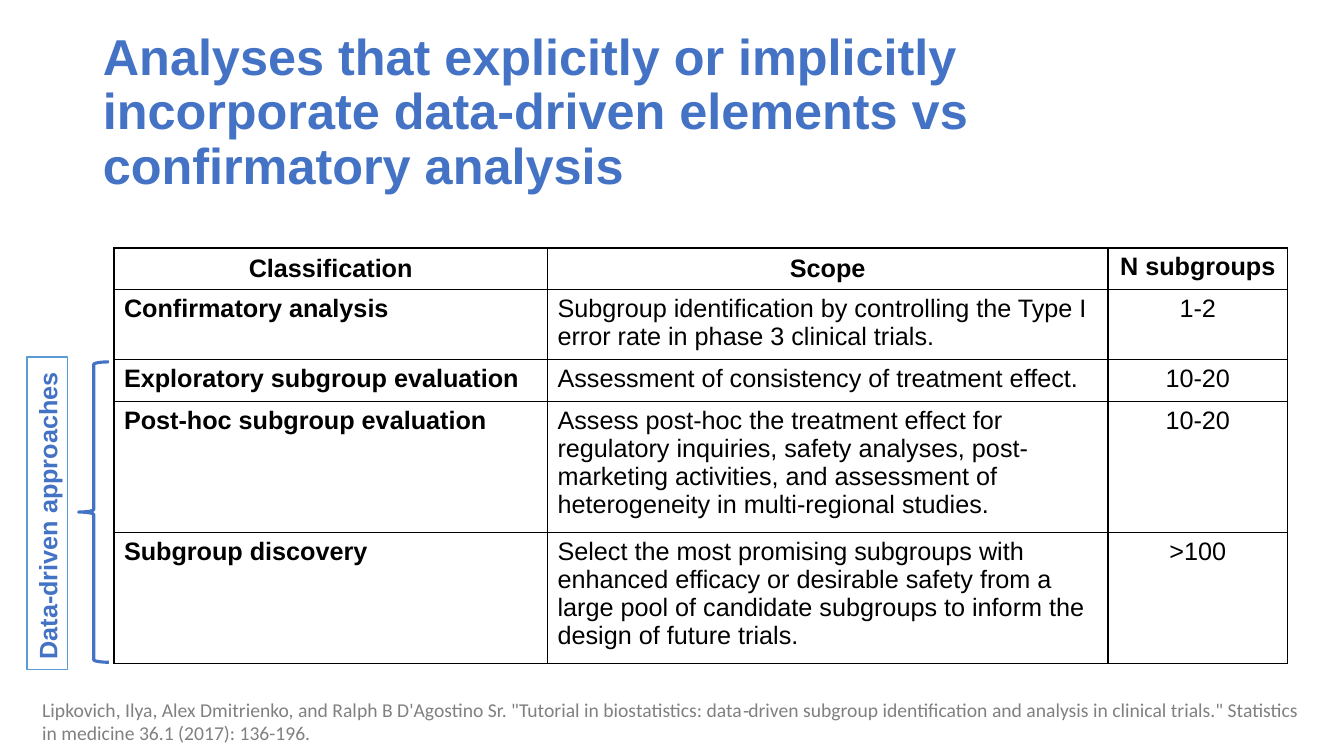
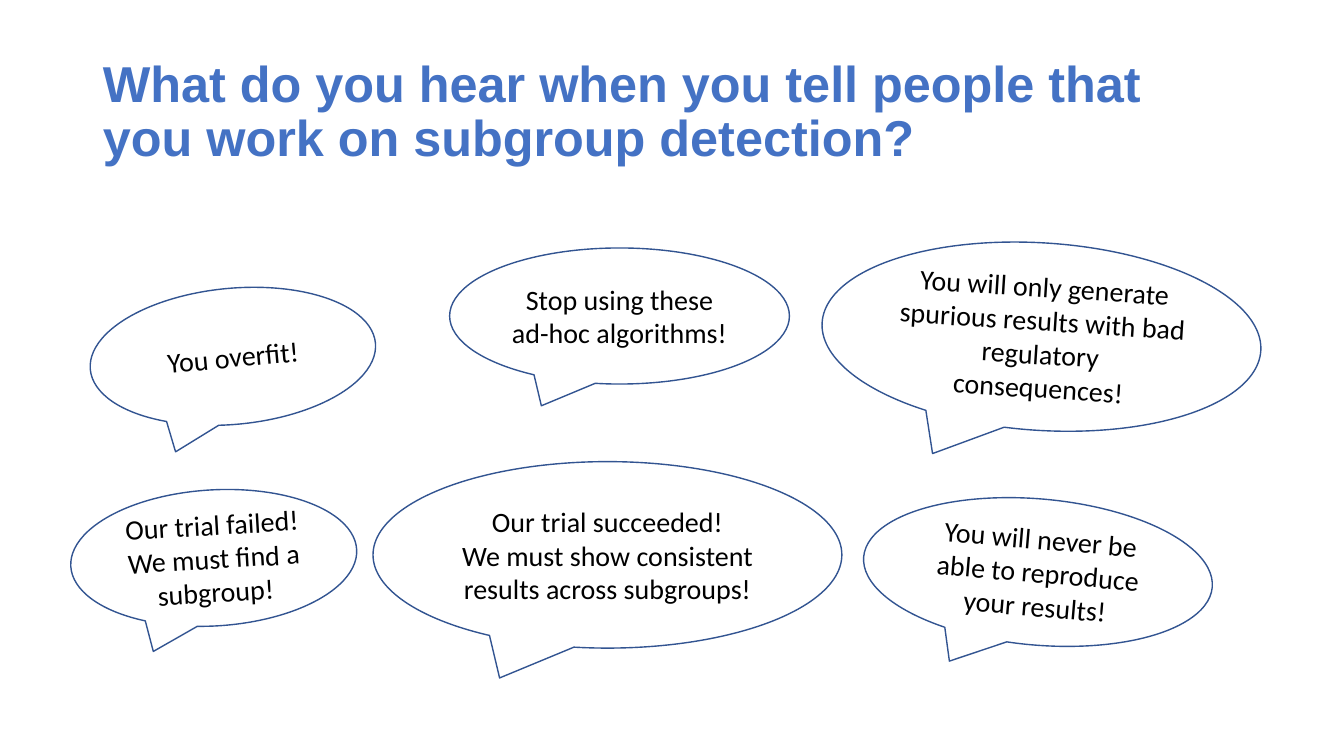
from lxml.etree import SubElement
from pptx import Presentation
from pptx.dml.color import RGBColor
from pptx.enum.shapes import MSO_SHAPE as Shape
from pptx.enum.text import MSO_ANCHOR as Anchor, MSO_AUTO_SIZE as AutoSize, PP_ALIGN as Align
from pptx.oxml.ns import qn
from pptx.util import Pt

PX = 9144
COLORS = {
    "title": "4472C4",
    "text": "000000",
    "source": "808080",
    "paper": "FFFFFF",
    "label_line": "5B9BD5",
    "bubble_line": "325491",
}
RGB = {name: RGBColor.from_string(value) for name, value in COLORS.items()}


def write_text(frame, text, font, size, color, bold=False, align=Align.LEFT, anchor=Anchor.TOP):
    frame.word_wrap = True
    frame.vertical_anchor = anchor
    frame.text = text
    for paragraph in frame.paragraphs:
        paragraph.alignment = align
        paragraph.font.name = font
        paragraph.font.size = Pt(size)
        paragraph.font.bold = bold
        paragraph.font.color.rgb = RGB[color]


def add_outlined(page, kind, box, line, width, filled=True):
    shape = page.shapes.add_shape(kind, *[n * PX for n in box])
    shape.shadow.inherit = False
    if filled:
        shape.fill.solid()
        shape.fill.fore_color.rgb = RGB["paper"]
    else:
        shape.fill.background()
    shape.line.color.rgb = RGB[line]
    shape.line.width = Pt(width)
    return shape


deck = Presentation()
deck.slide_width, deck.slide_height = 1333 * PX, 750 * PX

TITLES = [
    "Analyses that explicitly or implicitly incorporate data-driven elements vs confirmatory analysis",
    "What do you hear when you tell people that you work on subgroup detection?",
]
pages = []
for heading in TITLES:
    page = deck.slides.add_slide(deck.slide_layouts[5])
    title = page.shapes.title
    title.left, title.top, title.width, title.height = [n * PX for n in (92, 40, 1150, 145)]
    write_text(title.text_frame, heading, "Arial", 36, "title", bold=True, anchor=Anchor.MIDDLE)
    title.text_frame.auto_size = AutoSize.NONE
    title.text_frame.paragraphs[0].line_spacing = 0.9
    pages.append(page)
table_page, bubble_page = pages

source = table_page.shapes.add_textbox(*[n * PX for n in (32, 687, 1269, 57)])
write_text(
    source.text_frame,
    "Lipkovich, Ilya, Alex Dmitrienko, and Ralph B D'Agostino Sr. \"Tutorial in biostatistics: "
    "data‐driven subgroup identification and analysis in clinical trials.\" "
    "Statistics in medicine 36.1 (2017): 136-196.",
    "Calibri", 14, "source",
)

ROWS = [
    ("Classification", "Scope", "N subgroups"),
    ("Confirmatory analysis",
     "Subgroup identification by controlling the Type I error rate in phase 3 clinical trials.",
     "1-2"),
    ("Exploratory subgroup evaluation", "Assessment of consistency of treatment effect.", "10-20"),
    ("Post-hoc subgroup evaluation",
     "Assess post-hoc the treatment effect for regulatory inquiries, safety analyses, "
     "post-marketing activities, and assessment of heterogeneity in multi-regional studies.",
     "10-20"),
    ("Subgroup discovery",
     "Select the most promising subgroups with enhanced efficacy or desirable safety from a "
     "large pool of candidate subgroups to inform the design of future trials.",
     ">100"),
]
WIDTHS = [430, 556, 178]
HEIGHTS = [41, 70, 41, 130, 130]
table = table_page.shapes.add_table(
    len(ROWS), len(WIDTHS), 113 * PX, 246 * PX, sum(WIDTHS) * PX, sum(HEIGHTS) * PX
).table
table.first_row = table.horz_banding = False
for column, width in zip(table.columns, WIDTHS):
    column.width = width * PX
for r, (row, height, texts) in enumerate(zip(table.rows, HEIGHTS, ROWS)):
    row.height = height * PX
    for c, text in enumerate(texts):
        cell = table.cell(r, c)
        properties = cell._tc.get_or_add_tcPr()
        for side in ("a:lnL", "a:lnR", "a:lnT", "a:lnB"):
            border = SubElement(properties, qn(side), w=str(Pt(1)))
            SubElement(SubElement(border, qn("a:solidFill")), qn("a:srgbClr"), val=COLORS["text"])
        cell.fill.solid()
        cell.fill.fore_color.rgb = RGB["paper"]
        write_text(
            cell.text_frame, text, "Arial", 18, "text",
            bold=r == 0 or c == 0,
            align=Align.CENTER if r == 0 or c == 2 else Align.LEFT,
        )
        cell.vertical_anchor = Anchor.MIDDLE if r == 0 and c < 2 else Anchor.TOP

add_outlined(table_page, Shape.LEFT_BRACE, (78, 359, 30, 298), "title", 2.25, filled=False)
label = add_outlined(table_page, Shape.RECTANGLE, (-108, 489, 310, 40), "label_line", 1)
label.rotation = 270
write_text(label.text_frame, "Data-driven approaches", "Arial", 18, "title", bold=True)

BUBBLES = [
    ((89, 286, 284, 135), -5.3, "You overfit!"),
    ((856, 495, 347, 145), 5, "You will never be able to reproduce your results!"),
    ((446, 246, 337, 135), 0, "Stop using these ad-hoc algorithms!"),
    ((815, 241, 436, 186), 3.7,
     "You will only generate spurious results with bad regulatory consequences!"),
    ((70, 486, 284, 135), -3.4, "Our trial failed! We must find a subgroup!"),
    ((370, 458, 465, 185), 0,
     "Our trial succeeded!\nWe must show consistent results across subgroups!"),
]
for box, angle, quote in BUBBLES:
    bubble = add_outlined(bubble_page, Shape.OVAL_CALLOUT, box, "bubble_line", 1)
    bubble.rotation = angle
    bubble.adjustments[0], bubble.adjustments[1] = -0.23, 0.66
    write_text(bubble.text_frame, quote, "Calibri", 20, "text",
               align=Align.CENTER, anchor=Anchor.MIDDLE)

deck.save("out.pptx")
